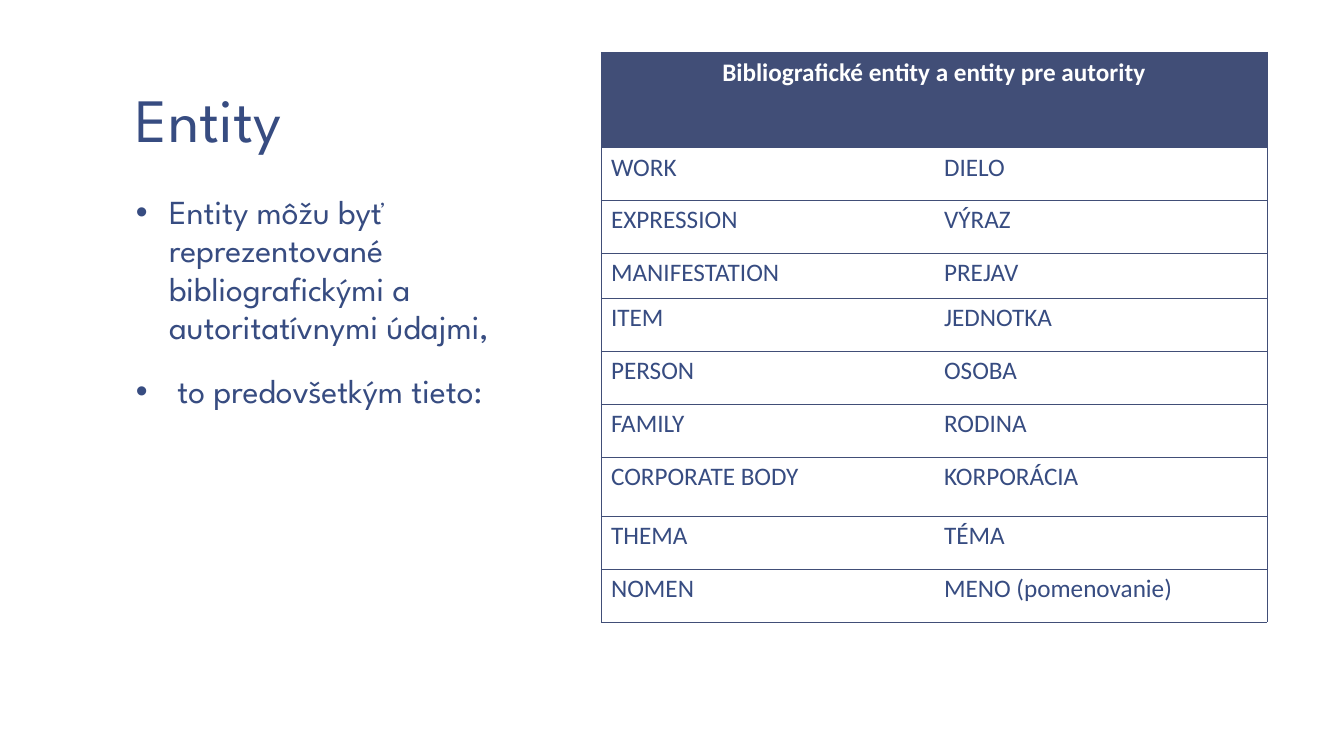
from pptx import Presentation
from pptx.dml.color import RGBColor
from pptx.enum.text import MSO_ANCHOR, MSO_AUTO_SIZE, PP_ALIGN
from pptx.oxml import parse_xml
from pptx.oxml.ns import nsdecls
from pptx.util import Inches, Pt

TITLE = "Entity"
BULLETS = [
    "Entity môžu byť reprezentované bibliografickými a autoritatívnymi údajmi,",
    " to predovšetkým tieto:",
]
TABLE_HEADER = "Bibliografické entity a entity pre autority"
ENTITIES = [
    ("WORK", "DIELO"),
    ("EXPRESSION", "VÝRAZ"),
    ("MANIFESTATION", "PREJAV"),
    ("ITEM", "JEDNOTKA"),
    ("PERSON", "OSOBA"),
    ("FAMILY", "RODINA"),
    ("CORPORATE BODY", "KORPORÁCIA"),
    ("THEMA", "TÉMA"),
    ("NOMEN", "MENO (pomenovanie)"),
]

TEXT_BLUE = RGBColor(0x37, 0x4C, 0x81)
TABLE_BLUE = RGBColor(0x41, 0x4E, 0x77)
WHITE = RGBColor(0xFF, 0xFF, 0xFF)

TITLE_FONT = {"name": "League Spartan", "size": Pt(44), "bold": False}
BODY_FONT = {"name": "League Spartan", "size": Pt(24), "bold": False}
HEADER_FONT = {"name": "Calibri", "size": Pt(18), "bold": True}
CELL_FONT = {"name": "Calibri", "size": Pt(18), "bold": False}

TITLE_BOX = (123, 8, 1120, 154)
BODY_BOX = (123, 187, 454, 493)
TABLE_ORIGIN = (601, 52)
COLUMN_WIDTH = 333
ROW_HEIGHT = 53
SPECIAL_ROW_HEIGHTS = {0: 95, 3: 45, 7: 59}
BULLET_INDENT = 33
BORDER_WIDTH = Pt(0.25)


def px(length):
    return round(length * Inches(1) / 100.8)


def set_attributes(target, values):
    for name, value in values.items():
        setattr(target, name, value)


def style_font(font, values, color):
    set_attributes(font, values)
    font.color.rgb = color


def place_placeholder(shape, box, anchor):
    edges = ("left", "top", "width", "height")
    set_attributes(shape, dict(zip(edges, map(px, box))))
    set_attributes(shape.text_frame, {
        "margin_left": px(13), "margin_right": px(13),
        "margin_top": px(7), "margin_bottom": px(7),
        "word_wrap": True, "auto_size": MSO_AUTO_SIZE.NONE,
        "vertical_anchor": anchor,
    })


def add_borders(cell, visible_sides):
    """Draw the named sides of a cell and blank the others."""
    properties = cell._tc.get_or_add_tcPr()
    for side in "LRTB":
        paint = (f'<a:solidFill><a:srgbClr val="{TABLE_BLUE}"/></a:solidFill>'
                 if side in visible_sides else "<a:noFill/>")
        properties.append(parse_xml(
            f'<a:ln{side} {nsdecls("a")} w="{BORDER_WIDTH}">{paint}</a:ln{side}>'))


def add_title(page):
    title = page.shapes.title
    place_placeholder(title, TITLE_BOX, MSO_ANCHOR.BOTTOM)
    para = title.text_frame.paragraphs[0]
    para.text = TITLE
    set_attributes(para, {"alignment": PP_ALIGN.LEFT, "line_spacing": 0.85})
    style_font(para.runs[0].font, TITLE_FONT, TEXT_BLUE)


def add_bullets(page):
    body = page.placeholders[1]
    place_placeholder(body, BODY_BOX, MSO_ANCHOR.TOP)
    frame = body.text_frame
    for index, text in enumerate(BULLETS):
        para = frame.add_paragraph() if index else frame.paragraphs[0]
        para.text = text
        properties = para._p.get_or_add_pPr()
        properties.set("marL", str(px(BULLET_INDENT)))
        properties.set("indent", str(-px(BULLET_INDENT)))
        properties.append(parse_xml(f'<a:buFont {nsdecls("a")} typeface="Arial"/>'))
        properties.append(parse_xml(f'<a:buChar {nsdecls("a")} char="•"/>'))
        set_attributes(para, {"line_spacing": 0.95,
                              "space_before": Pt(18.6 if index else 0)})
        style_font(para.runs[0].font, BODY_FONT, TEXT_BLUE)


def add_entity_table(page):
    rows = [(TABLE_HEADER, ""), *ENTITIES]
    heights = [SPECIAL_ROW_HEIGHTS.get(index, ROW_HEIGHT) for index in range(len(rows))]
    left, top = TABLE_ORIGIN
    table = page.shapes.add_table(len(rows), 2, px(left), px(top),
                                  px(2 * COLUMN_WIDTH), px(sum(heights))).table
    set_attributes(table, {"first_row": False, "horz_banding": False})
    for column in table.columns:
        column.width = px(COLUMN_WIDTH)
    table.cell(0, 0).merge(table.cell(0, 1))

    for row_index, texts in enumerate(rows):
        table.rows[row_index].height = px(heights[row_index])
        is_header = row_index == 0
        for column_index, text in enumerate(texts):
            cell = table.cell(row_index, column_index)
            add_borders(cell, "LRTB" if is_header else "LR"[column_index] + "TB")
            if is_header:
                cell.fill.solid()
                cell.fill.fore_color.rgb = TABLE_BLUE
            else:
                cell.fill.background()
            if not text:
                continue
            para = cell.text_frame.paragraphs[0]
            para.text = text
            para.alignment = PP_ALIGN.CENTER if is_header else PP_ALIGN.LEFT
            style_font(para.runs[0].font,
                       HEADER_FONT if is_header else CELL_FONT,
                       WHITE if is_header else TEXT_BLUE)


def main():
    deck = Presentation()
    deck.slide_width, deck.slide_height = px(1344), px(756)
    page = deck.slides.add_slide(deck.slide_layouts[1])
    add_title(page)
    add_bullets(page)
    add_entity_table(page)
    deck.save("out.pptx")


if __name__ == "__main__":
    main()
